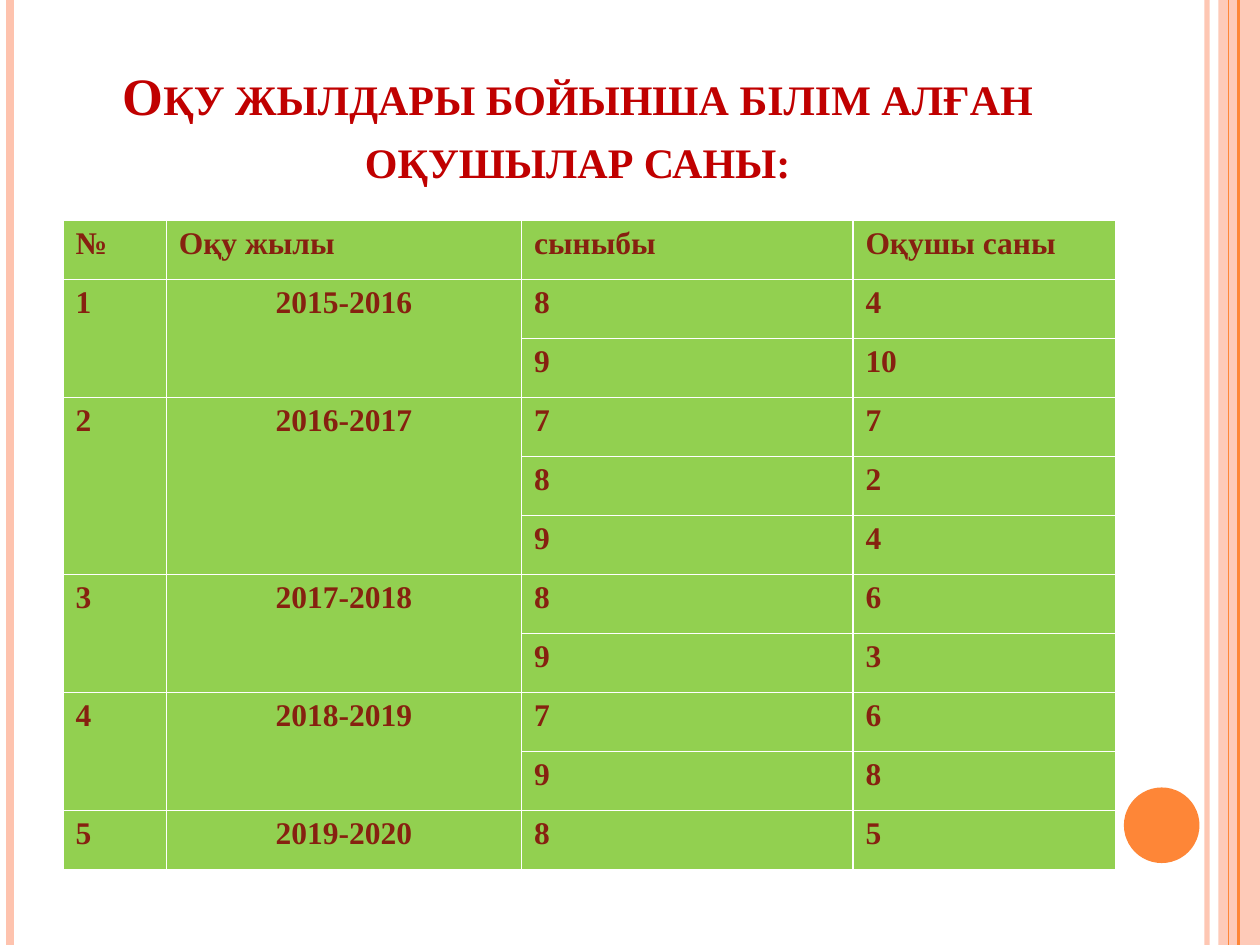
from pptx import Presentation
from pptx.dml.color import RGBColor
from pptx.enum.shapes import MSO_CONNECTOR, MSO_SHAPE
from pptx.enum.text import MSO_ANCHOR, MSO_AUTO_SIZE, PP_ALIGN
from pptx.oxml.ns import qn
from pptx.util import Inches, Pt
from lxml.etree import SubElement

FONT = "Times New Roman"
PEACH, ORANGE = "FEC3AE", "FE8637"
RED, BROWN, GREEN = "C00000", "862110", "92D050"

TITLE = "Оқу жылдары бойынша білім алған оқушылар саны:"
HEADINGS = ["№", "Оқу жылы", "сыныбы", "Оқушы саны"]
YEARS = [
    ("2015-2016", [(8, 4), (9, 10)]),
    ("2016-2017", [(7, 7), (8, 2), (9, 4)]),
    ("2017-2018", [(8, 6), (9, 3)]),
    ("2018-2019", [(7, 6), (9, 8)]),
    ("2019-2020", [(8, 5)]),
]
COLUMN_WIDTHS = [0.82, 2.82, 2.63, 2.09]
ROW_HEIGHT = 5.15 / 11
STRIPES = [
    (9.58, PEACH, 3, 93),
    (0.08, PEACH, 4.5, 100),
    (9.83, ORANGE, 1.5, 100),
    (9.75, ORANGE, 0.75, 100),
]


def paint(color_format, color):
    color_format.rgb = RGBColor.from_string(color)


def set_opacity(fill_parent, percent):
    color = fill_parent.find(qn("a:solidFill"))[0]
    SubElement(color, qn("a:alpha"), val=str(percent * 1000))


def add_stripe(slide, x, color, width, opacity):
    stripe = slide.shapes.add_connector(
        MSO_CONNECTOR.STRAIGHT, Inches(x), 0, Inches(x), Inches(7.5))
    stripe.line.width = Pt(width)
    stripe.line.fill.solid()
    paint(stripe.line.fill.fore_color, color)
    properties = stripe._element.spPr
    if opacity < 100:
        set_opacity(properties.find(qn("a:ln")), opacity)
    SubElement(properties, qn("a:effectLst"))


def add_decoration(slide, kind, box, color):
    decoration = slide.shapes.add_shape(kind, *map(Inches, box))
    decoration.shadow.inherit = False
    decoration.fill.solid()
    paint(decoration.fill.fore_color, color)
    decoration.line.fill.background()
    return decoration


def style_text(paragraph, size, color, align):
    paragraph.alignment = align
    for run in paragraph.runs:
        run.font.name = FONT
        run.font.size = Pt(size)
        run.font.bold = True
        paint(run.font.color, color)


def add_title(slide):
    title = slide.shapes.title
    title.left, title.top = Inches(0.5), Inches(0.3)
    title.width, title.height = Inches(8.17), Inches(1.25)
    frame = title.text_frame
    frame.text = TITLE
    frame.auto_size = MSO_AUTO_SIZE.NONE
    frame.vertical_anchor = MSO_ANCHOR.BOTTOM
    heading = frame.paragraphs[0]
    style_text(heading, 30, RED, PP_ALIGN.CENTER)
    heading.runs[0].font._element.set("cap", "small")


def fill_cell(cell, content, align=PP_ALIGN.LEFT):
    cell.text = str(content)
    style_text(cell.text_frame.paragraphs[0], 18, BROWN, align)


def add_pupil_table(slide):
    row_count = 1 + sum(len(classes) for _, classes in YEARS)
    table = slide.shapes.add_table(
        row_count, len(HEADINGS), Inches(0.5), Inches(1.75),
        Inches(sum(COLUMN_WIDTHS)), Inches(ROW_HEIGHT * row_count)).table
    for column, width in zip(table.columns, COLUMN_WIDTHS):
        column.width = Inches(width)
    for row in table.rows:
        row.height = Inches(ROW_HEIGHT)
    for cell in table.iter_cells():
        cell.fill.solid()
        paint(cell.fill.fore_color, GREEN)
    for column, heading in enumerate(HEADINGS):
        fill_cell(table.cell(0, column), heading)
    first = 1
    for number, (year, classes) in enumerate(YEARS, 1):
        last = first + len(classes) - 1
        if last > first:
            for column in (0, 1):
                table.cell(first, column).merge(table.cell(last, column))
        fill_cell(table.cell(first, 0), number)
        fill_cell(table.cell(first, 1), year, PP_ALIGN.CENTER)
        for row, (grade, pupils) in enumerate(classes, first):
            fill_cell(table.cell(row, 2), grade)
            fill_cell(table.cell(row, 3), pupils)
        first = last + 1


def main():
    deck = Presentation()
    deck.slide_width, deck.slide_height = Inches(10), Inches(7.5)
    slide = deck.slides.add_slide(deck.slide_layouts[5])
    band = add_decoration(slide, MSO_SHAPE.RECTANGLE, (9.67, 0, 0.33, 7.5), PEACH)
    set_opacity(band._element.spPr, 87)
    for stripe in STRIPES:
        add_stripe(slide, *stripe)
    add_decoration(slide, MSO_SHAPE.OVAL, (8.92, 6.25, 0.6, 0.6), ORANGE)
    add_title(slide)
    add_pupil_table(slide)
    deck.save("out.pptx")


if __name__ == "__main__":
    main()
